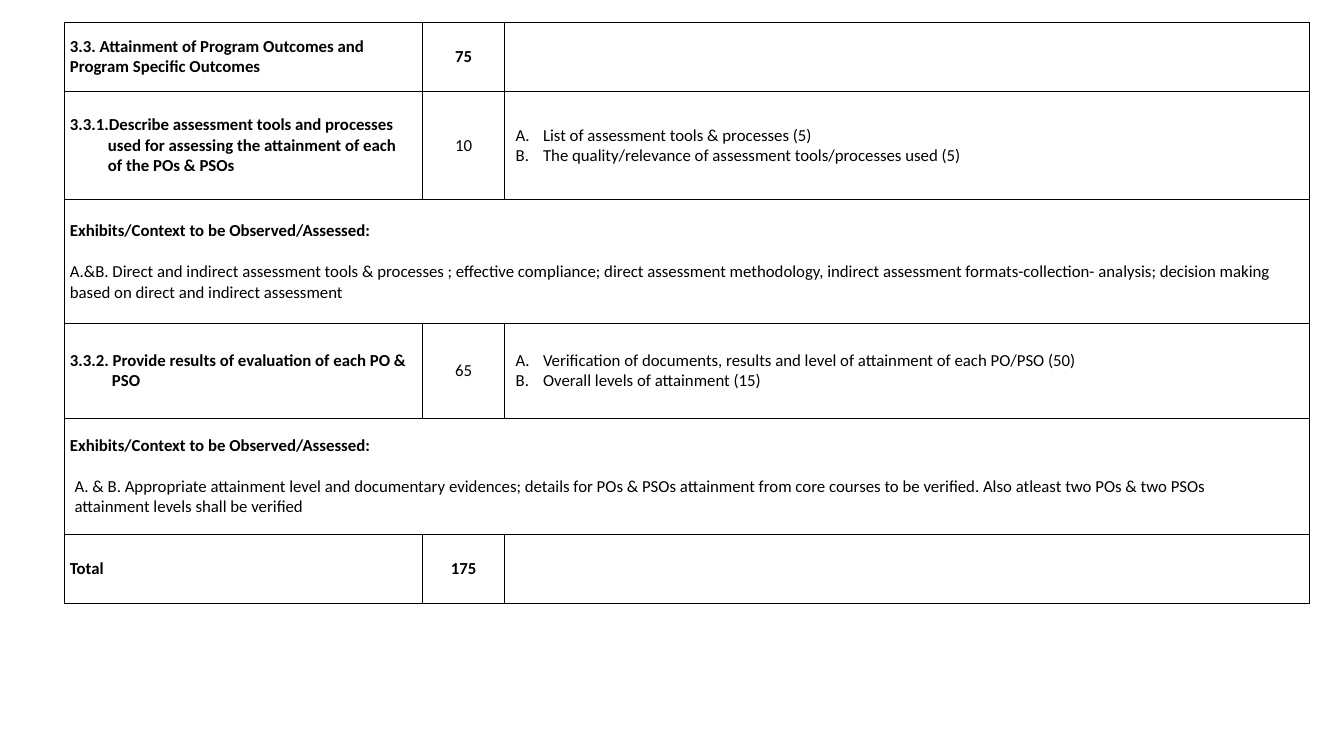
from dataclasses import dataclass

from lxml import etree
from pptx import Presentation
from pptx import util as u
from pptx.dml.color import RGBColor
from pptx.enum import text
from pptx.oxml.ns import qn

INK = "000000"
EXHIBITS = "Exhibits/Context to be Observed/Assessed:"


@dataclass
class Line:
    """One paragraph; indents in centimetres, space before in points."""
    words: str
    bold: bool = False
    left: float = 0.13
    hanging: float = 0
    right: float = 0.25
    before: float = 3.8
    centred: bool = False
    lettered: bool = False


@dataclass
class Row:
    """One table row; a single cell spans the whole width."""
    height: float
    cells: list[list[Line]]


def colour(value: str) -> RGBColor:
    return RGBColor.from_string(value)


def marks(value: str, bold: bool = False) -> list[Line]:
    return [Line(value, bold, left=0, right=0, centred=True)]


def criteria(first: str, second: str) -> list[Line]:
    layout = {"left": 0.97, "hanging": 0.69, "lettered": True}
    return [Line(first, **layout), Line(second, before=0, **layout)]


def exhibits(detail: str, left: float) -> list[Line]:
    return [Line(EXHIBITS, True), Line(detail, left=left, right=0.75, before=14.9)]


# Content
ROWS = [
    Row(1.75, [[Line("3.3. Attainment of Program Outcomes and Program Specific Outcomes", True)],
               marks("75", True), []]),
    Row(2.72, [[Line("3.3.1.Describe assessment tools and processes used for assessing "
                     "the attainment of each of the POs & PSOs", True, left=1.09, hanging=0.96)],
               marks("10"),
               criteria("List of assessment tools & processes (5)",
                        "The quality/relevance of assessment tools/processes used (5)")]),
    Row(3.12, [exhibits("A.&B. Direct and indirect assessment tools & processes ; effective "
                        "compliance; direct assessment methodology, indirect assessment "
                        "formats-collection- analysis; decision making based on direct and "
                        "indirect assessment", 0.13)]),
    Row(2.39, [[Line("3.3.2. Provide results of evaluation of each PO & PSO", True,
                     left=1.19, hanging=1.06)],
               marks("65"),
               criteria("Verification of documents, results and level of attainment of each "
                        "PO/PSO (50)", "Overall levels of attainment (15)")]),
    Row(2.92, [exhibits("A. & B. Appropriate attainment level and documentary evidences; details "
                        "for POs & PSOs attainment from core courses to be verified. Also atleast "
                        "two POs & two PSOs attainment levels shall be verified", 0.25)]),
    Row(1.75, [[Line("Total", True)], marks("175", True), []]),
]
COLUMNS = [9.02, 2.06, 20.27]
CELL_FORMAT = {"margin_left": 0, "margin_right": 0, "margin_top": 0, "margin_bottom": 0,
               "vertical_anchor": text.MSO_ANCHOR.MIDDLE}
FONT_FORMAT = {"name": "Calibri", "size": u.Pt(12)}


def apply(target, values: dict) -> None:
    for name, value in values.items():
        setattr(target, name, value)


def draw_borders(cell) -> None:
    properties = cell._tc.get_or_add_tcPr()
    for side in ("a:lnL", "a:lnR", "a:lnT", "a:lnB"):
        edge = etree.SubElement(properties, qn(side), w=str(u.Pt(1)))
        fill = etree.SubElement(edge, qn("a:solidFill"))
        etree.SubElement(fill, qn("a:srgbClr"), val=INK)


def write_line(paragraph, line: Line) -> None:
    run = paragraph.add_run()
    run.text = line.words
    apply(run.font, {**FONT_FORMAT, "bold": line.bold})
    run.font.color.rgb = colour(INK)
    apply(paragraph, {
        "space_before": u.Pt(line.before),
        "alignment": text.PP_ALIGN.CENTER if line.centred else text.PP_ALIGN.LEFT,
    })
    properties = paragraph._p.get_or_add_pPr()
    for name, length in {"marL": line.left, "marR": line.right, "indent": -line.hanging}.items():
        properties.set(name, str(u.Cm(length)))
    if line.lettered:
        etree.SubElement(properties, qn("a:buFont"), typeface=FONT_FORMAT["name"])
        etree.SubElement(properties, qn("a:buAutoNum"), type="alphaUcPeriod")


def write_cell(cell, lines: list[Line]) -> None:
    frame = cell.text_frame
    for index, line in enumerate(lines):
        write_line(frame.add_paragraph() if index else frame.paragraphs[0], line)


def main() -> None:
    deck = Presentation()
    apply(deck, {"slide_width": u.Inches(13.33), "slide_height": u.Inches(7.5)})
    slide = deck.slides.add_slide(deck.slide_layouts[6])

    # Assessment table
    assessment = slide.shapes.add_table(
        len(ROWS), len(COLUMNS), u.Cm(1.63), u.Cm(0.56),
        u.Cm(sum(COLUMNS)), u.Cm(sum(row.height for row in ROWS))).table
    apply(assessment, {"first_row": False, "horz_banding": False})
    for column, width in zip(assessment.columns, COLUMNS):
        column.width = u.Cm(width)

    for index, row in enumerate(ROWS):
        assessment.rows[index].height = u.Cm(row.height)
        cells = list(assessment.rows[index].cells)
        for cell in cells:
            apply(cell, CELL_FORMAT)
            draw_borders(cell)
            cell.fill.background()
        if len(row.cells) == 1:
            cells[0].merge(cells[-1])
        for cell, lines in zip(cells, row.cells):
            write_cell(cell, lines)

    deck.save("out.pptx")


if __name__ == "__main__":
    main()
